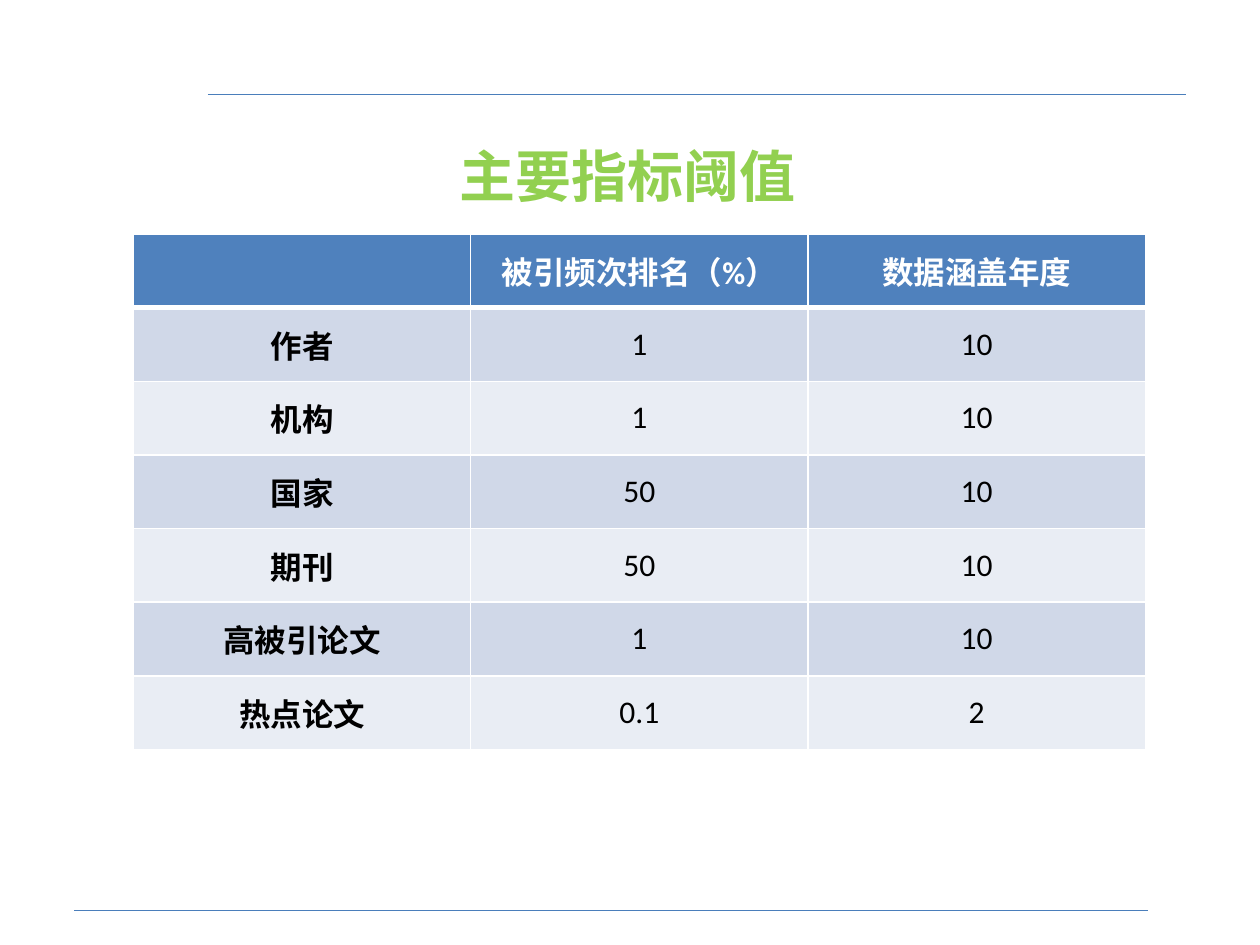
import pptx
import pptx.dml.color
import pptx.enum.text
import pptx.oxml
import pptx.oxml.ns
import pptx.util
from pptx.util import Cm

COLORS = {
    "rule": "4A7EBB",
    "title": "92D050",
    "header": "4F81BD",
    "band_dark": "D0D8E8",
    "band_light": "E9EDF4",
    "white": "FFFFFF",
    "black": "000000",
}
LATIN = "Calibri"
CJK = "Noto Sans CJK SC"
ROWS = [
    ("", "被引频次排名（%）", "数据涵盖年度"),
    ("作者", "1", "10"),
    ("机构", "1", "10"),
    ("国家", "50", "10"),
    ("期刊", "50", "10"),
    ("高被引论文", "1", "10"),
    ("热点论文", "0.1", "2"),
]


def rgb(name):
    """Return the named colour."""
    return pptx.dml.color.RGBColor.from_string(COLORS[name])


def write_text(frame, text, size=18, color="black", bold=False, latin=LATIN):
    """Write one centred paragraph in a text frame."""
    frame.vertical_anchor = pptx.enum.text.MSO_ANCHOR.MIDDLE
    para = frame.paragraphs[0]
    para.alignment = pptx.enum.text.PP_ALIGN.CENTER
    span = para.add_run()
    span.text = text
    span.font.size = pptx.util.Pt(size)
    span.font.bold = bold
    span.font.name = latin
    span.font.color.rgb = rgb(color)
    east_asian = pptx.oxml.parse_xml(
        f'<a:ea {pptx.oxml.ns.nsdecls("a")} typeface="{CJK}"/>'
    )
    span.font._element.append(east_asian)


def set_borders(cell, **widths):
    """Draw white cell borders with the given widths in points."""
    properties = cell._tc.get_or_add_tcPr()
    for index, (side, width) in enumerate(widths.items()):
        border = pptx.oxml.parse_xml(
            f'<a:ln{side} {pptx.oxml.ns.nsdecls("a")} w="{pptx.util.Pt(width)}">'
            f'<a:solidFill><a:srgbClr val="{COLORS["white"]}"/></a:solidFill>'
            f'</a:ln{side}>'
        )
        properties.insert(index, border)


def add_rule(page, left, top, width):
    """Draw a thin horizontal rule."""
    rule = page.shapes.add_connector(
        pptx.enum.shapes.MSO_CONNECTOR.STRAIGHT, left, top, left + width, top
    )
    rule.line.color.rgb = rgb("rule")
    rule.line.width = pptx.util.Pt(0.75)
    effects = pptx.oxml.parse_xml(f'<a:effectLst {pptx.oxml.ns.nsdecls("a")}/>')
    rule._element.spPr.append(effects)


def place_title(page, left, top, width, height):
    """Place and format the slide title."""
    box = page.shapes.title
    box.left, box.top, box.width, box.height = left, top, width, height
    write_text(box.text_frame, "主要指标阈值", size=32, color="title", bold=True, latin=CJK)


def add_threshold_table(page, left, top, width, height):
    """Add the table of thresholds with equal rows and columns."""
    table = page.shapes.add_table(
        len(ROWS), len(ROWS[0]), left, top, width, height
    ).table
    for row_index, texts in enumerate(ROWS):
        is_header = row_index == 0
        band = "band_dark" if row_index % 2 else "band_light"
        for column_index, text in enumerate(texts):
            cell = table.cell(row_index, column_index)
            cell.fill.solid()
            cell.fill.fore_color.rgb = rgb("header" if is_header else band)
            set_borders(
                cell, L=1, R=1, T=3 if row_index == 1 else 1, B=3 if is_header else 1
            )
            cell.vertical_anchor = pptx.enum.text.MSO_ANCHOR.MIDDLE
            if text:
                write_text(
                    cell.text_frame,
                    text,
                    color="white" if is_header else "black",
                    bold=is_header or column_index == 0,
                )
                cell.text_frame._txBody.bodyPr.attrib.pop("anchor", None)


def main():
    """Build the deck and save it."""
    deck = pptx.Presentation()
    deck.slide_width, deck.slide_height = Cm(25.4), Cm(19.05)
    page = deck.slides.add_slide(deck.slide_layouts[5])
    add_rule(page, Cm(4.19), Cm(1.91), Cm(19.71))
    add_rule(page, Cm(1.5), Cm(18.36), Cm(21.64))
    place_title(page, Cm(1.22), Cm(1.91), Cm(22.86), Cm(3.23))
    add_threshold_table(page, Cm(2.69), Cm(4.72), Cm(20.4), Cm(10.39))
    deck.save("out.pptx")


if __name__ == "__main__":
    main()
